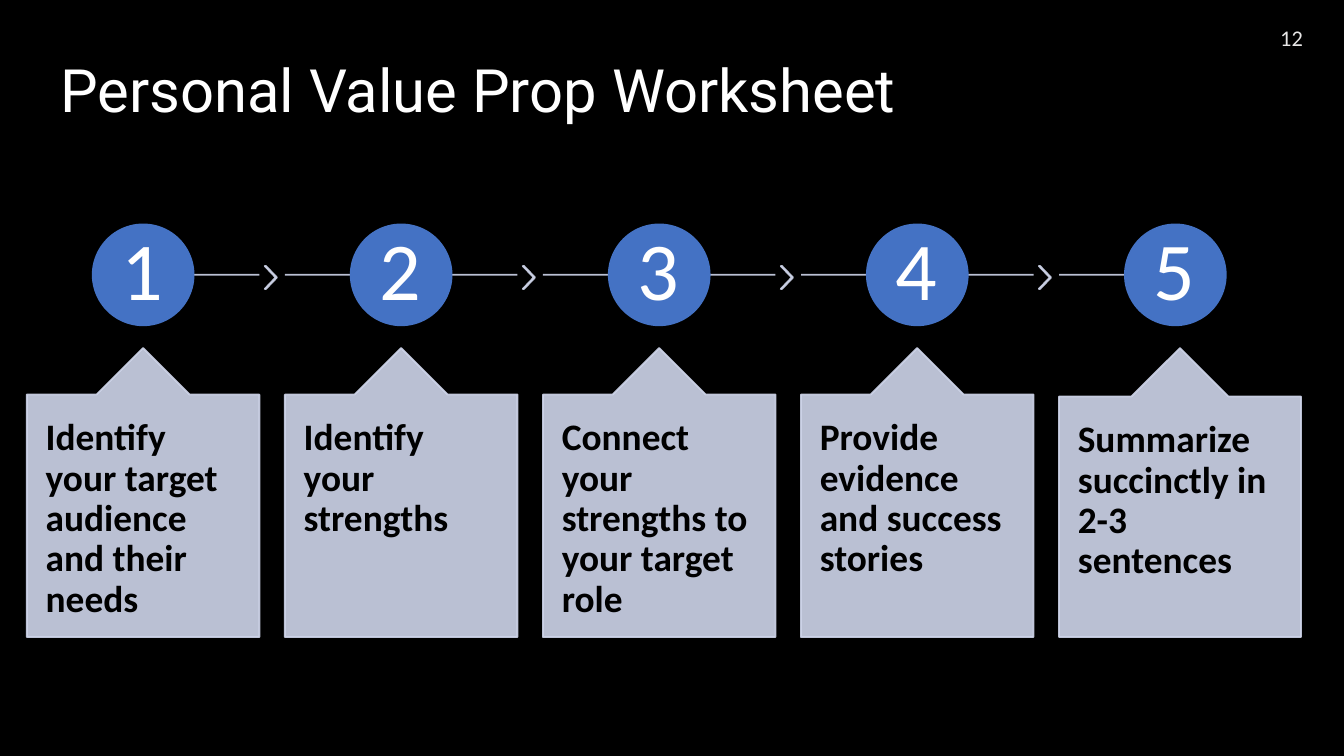
from lxml import etree
from pptx import Presentation
from pptx.dml.color import RGBColor
from pptx.enum.shapes import MSO_CONNECTOR, MSO_SHAPE
from pptx.enum.text import MSO_ANCHOR, PP_ALIGN
from pptx.oxml.ns import qn
from pptx.util import Inches, Pt

LEFT, CENTER = PP_ALIGN.LEFT, PP_ALIGN.CENTER
TOP, MIDDLE = MSO_ANCHOR.TOP, MSO_ANCHOR.MIDDLE
OVAL, CHEVRON, CALLOUT = MSO_SHAPE.OVAL, MSO_SHAPE.CHEVRON, MSO_SHAPE.UP_ARROW_CALLOUT
STRAIGHT = MSO_CONNECTOR.STRAIGHT

COLORS = {
    "background": "000000",
    "title": "FFFFFF",
    "page": "E7E6E6",
    "circle": "4472C4",
    "number": "FFFFFF",
    "card": "CFD5EA",
    "card_text": "000000",
}
STEPS = [
    "Identify your target audience and their needs",
    "Identify your strengths",
    "Connect your strengths to your target role",
    "Provide evidence and success stories",
    "Summarize succinctly in 2-3 sentences",
]
SLIDE_WIDTH = Inches(10)
SLIDE_HEIGHT = SLIDE_WIDTH * 9 // 16
STEPS_LEFT, STEPS_TOP, STEP_PITCH = 0.2, 1.67, 1.92
CARD_WIDTH, LAST_CARD_WIDTH, CARD_HEIGHT = 1.73, 1.8, 2.15
CIRCLE_SIZE, CARD_OFFSET = 0.75, 0.92
POINTER_RATIO = 0.2


def rgb(name):
    return RGBColor.from_string(COLORS[name])


def set_alpha(properties, percent):
    """Make every solid colour in the shape properties partly transparent."""
    for color in properties.iter(qn("a:srgbClr")):
        etree.SubElement(color, qn("a:alpha"), val=str(percent * 1000))


def add_text(slide, text, left, top, width, height, *, size, color, font="Calibri",
             bold=False, align=LEFT, anchor=MIDDLE, inset=(0.1, 0.05), spacing=0.9):
    box = slide.shapes.add_textbox(Inches(left), Inches(top), Inches(width), Inches(height))
    frame = box.text_frame
    frame.word_wrap = True
    frame.vertical_anchor = anchor
    frame.margin_left = frame.margin_right = Inches(inset[0])
    frame.margin_top = frame.margin_bottom = Inches(inset[1])
    paragraph = frame.paragraphs[0]
    paragraph.alignment = align
    paragraph.line_spacing = spacing
    run = paragraph.add_run()
    run.text = text
    run.font.name = font
    run.font.size = Pt(size)
    run.font.bold = bold
    run.font.color.rgb = rgb(color)


def add_filled(slide, kind, left, top, width, height, color, alpha=100, adjustments=()):
    shape = slide.shapes.add_shape(kind, Inches(left), Inches(top), Inches(width), Inches(height))
    shape.shadow.inherit = False
    for index, value in enumerate(adjustments):
        shape.adjustments[index] = value
    shape.fill.solid()
    shape.fill.fore_color.rgb = rgb(color)
    shape.line.color.rgb = rgb(color)
    shape.line.width = Pt(1)
    if alpha < 100:
        set_alpha(shape.element.spPr, alpha)


def add_track(slide, start, end, y):
    track = slide.shapes.add_connector(STRAIGHT, Inches(start), Inches(y), Inches(end), Inches(y))
    track.line.color.rgb = rgb("card")
    track.line.width = Pt(1)
    properties = track.element.spPr
    set_alpha(properties, 90)
    etree.SubElement(properties, qn("a:effectLst"))


def add_header(slide, left, top):
    add_text(slide, "12", left + 9.04, top - 0.18, 0.44, 0.3, size=12, color="page",
             align=CENTER, spacing=1)
    add_text(slide, "Personal Value Prop Worksheet", left, top, 8.28, 0.76,
             size=32, color="title", font="Roboto")


def add_step(slide, number, text, left, top, width, is_first, is_last):
    """Place a numbered circle on its track, with the callout card below."""
    middle = left + CARD_WIDTH / 2
    track_y = top + CIRCLE_SIZE / 2
    track_start = middle if is_first else left
    track_end = middle if is_last else left + CARD_WIDTH
    add_track(slide, track_start, track_end, track_y)
    if not is_last:
        add_filled(slide, CHEVRON, left + CARD_WIDTH + 0.04, top + 0.31, 0.09, 0.17,
                   "card", alpha=90, adjustments=(0.9,))

    circle_left = middle - CIRCLE_SIZE / 2
    add_filled(slide, OVAL, circle_left, top, CIRCLE_SIZE, CIRCLE_SIZE, "circle")
    add_text(slide, str(number), circle_left + 0.11, top + 0.11, 0.52, 0.52, size=44,
             color="number", align=CENTER, inset=(0.03, 0.03))

    card_top = top + CARD_OFFSET
    pointer = POINTER_RATIO * width
    add_filled(slide, CALLOUT, left, card_top, width, CARD_HEIGHT, "card", alpha=90,
               adjustments=(0.5, POINTER_RATIO, POINTER_RATIO, 1))
    add_text(slide, text, left, card_top + pointer, width, CARD_HEIGHT - pointer, size=20,
             color="card_text", bold=True, anchor=TOP, inset=(0.14, 0.18))


def add_steps(slide, left, top):
    for index, text in enumerate(STEPS):
        is_last = index == len(STEPS) - 1
        width = LAST_CARD_WIDTH if is_last else CARD_WIDTH
        add_step(slide, index + 1, text, left + index * STEP_PITCH, top, width,
                 index == 0, is_last)


def main():
    presentation = Presentation()
    presentation.slide_width = SLIDE_WIDTH
    presentation.slide_height = SLIDE_HEIGHT
    slide = presentation.slides.add_slide(presentation.slide_layouts[6])
    slide.background.fill.solid()
    slide.background.fill.fore_color.rgb = rgb("background")
    add_header(slide, 0.35, 0.31)
    add_steps(slide, STEPS_LEFT, STEPS_TOP)
    presentation.save("out.pptx")


if __name__ == "__main__":
    main()
